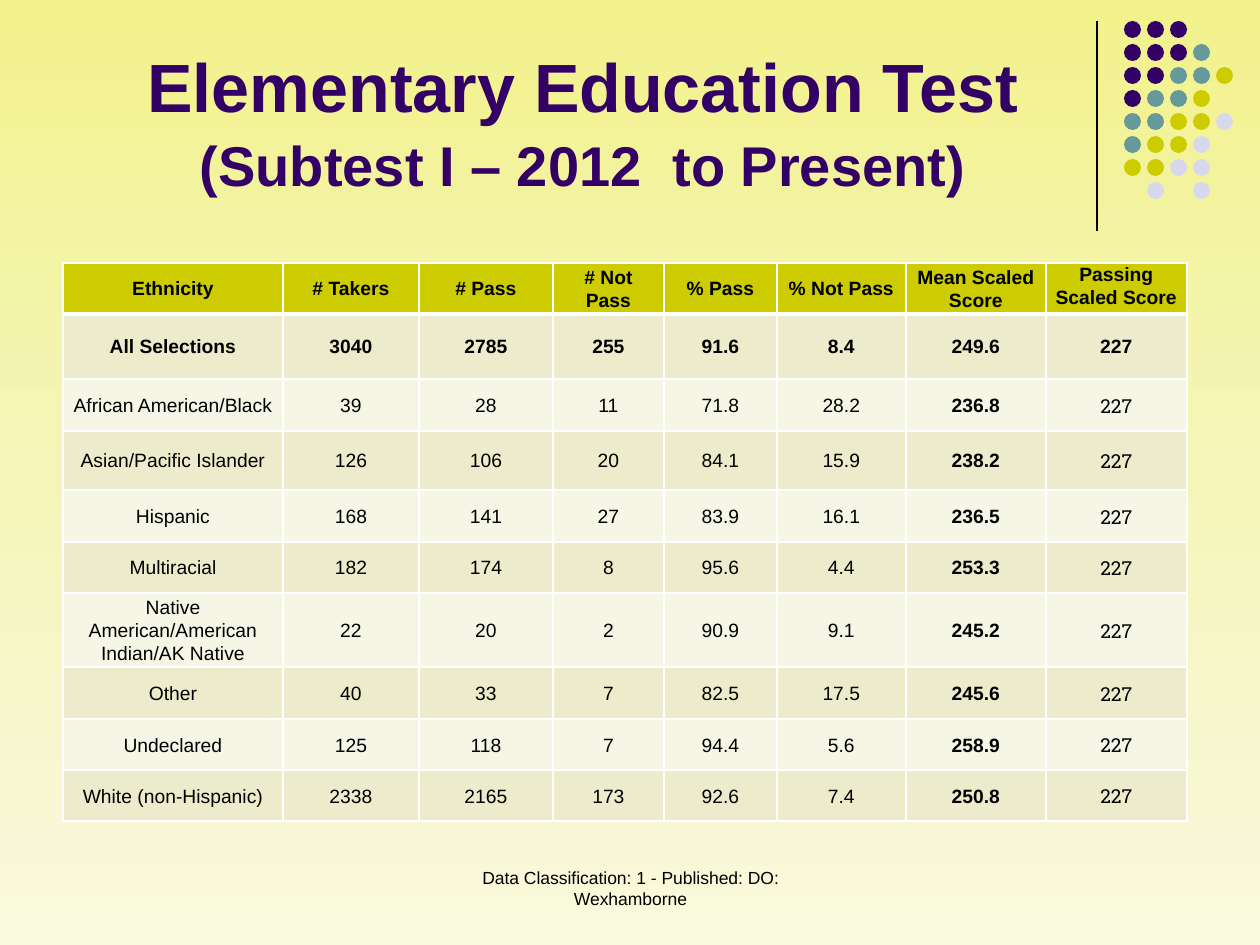
from copy import deepcopy

from lxml.etree import SubElement
from pptx import Presentation
from pptx.dml.color import RGBColor
from pptx.enum.shapes import MSO_CONNECTOR, MSO_SHAPE
from pptx.enum.text import MSO_ANCHOR, MSO_AUTO_SIZE, PP_ALIGN
from pptx.oxml.ns import qn
from pptx.util import Pt

LINE = MSO_CONNECTOR.STRAIGHT
OVAL = MSO_SHAPE.OVAL
TOP, MIDDLE, BOTTOM = MSO_ANCHOR.TOP, MSO_ANCHOR.MIDDLE, MSO_ANCHOR.BOTTOM
NO_FIT = MSO_AUTO_SIZE.NONE
CENTER = PP_ALIGN.CENTER

COLORS = {
    "black": "000000", "white": "FFFFFF", "purple": "330066",
    "teal": "669999", "lime": "CCCC00", "lilac": "D8D8EC",
    "dark": "ECECCC", "light": "F6F6E7",
    "sky": "F2F28C", "mid": "F5F5BA", "base": "F9F9DE",
}
DOTS = ["PPP", "PPPT", "PPTTY", "PTTY", "TTYYL", "TYYL", "YYLL", " L L"]
HUES = {"P": "purple", "T": "teal", "Y": "lime", "L": "lilac"}
WIDTHS = [220, 136, 134, 111, 113, 129, 140, 141]
HEIGHTS = [51, 65, 52, 59, 52, 51, 68, 52, 51, 51]
HEADS = ["Ethnicity", "# Takers", "# Pass", "# Not Pass", "% Pass",
         "% Not Pass", "Mean Scaled Score", "Passing Scaled Score"]
SCORES = [
    ["All Selections", 3040, 2785, 255, 91.6, 8.4, 249.6, 227],
    ["African American/Black", 39, 28, 11, 71.8, 28.2, 236.8, 227],
    ["Asian/Pacific Islander", 126, 106, 20, 84.1, 15.9, 238.2, 227],
    ["Hispanic", 168, 141, 27, 83.9, 16.1, 236.5, 227],
    ["Multiracial", 182, 174, 8, 95.6, 4.4, 253.3, 227],
    ["Native American/American Indian/AK Native",
     22, 20, 2, 90.9, 9.1, 245.2, 227],
    ["Other", 40, 33, 7, 82.5, 17.5, 245.6, 227],
    ["Undeclared", 125, 118, 7, 94.4, 5.6, 258.9, 227],
    ["White (non-Hispanic)", 2338, 2165, 173, 92.6, 7.4, 250.8, 227],
]


def px(num):
    """Turn pixels into EMU at 126 to the inch."""
    return num * 914400 // 126


def tint(name):
    """Give the named color."""
    return RGBColor.from_string(COLORS[name])


def write(frame, text, sizes=(11,), color="black", bold=False,
          font="Arial", space=1.0):
    """Write centered lines, each with its own size, into a frame."""
    para = frame.paragraphs[0]
    para.alignment = CENTER
    para.line_spacing = space
    for num, (line, size) in enumerate(zip(text.split("\n"), sizes)):
        if num:
            para.add_line_break()
        run = para.add_run()
        run.text = line
        run.font.size = Pt(size)
        run.font.name = font
        run.font.bold = bold
        run.font.color.rgb = tint(color)


def paint(slide):
    """Fill the background with a gradient from top to bottom."""
    fill = slide.background.fill
    fill.gradient()
    fill.gradient_angle = 270
    stops = slide.element.find(".//" + qn("a:gsLst"))
    stops.insert(1, deepcopy(stops[0]))
    for num, name in enumerate(["sky", "mid", "base"]):
        stop = fill.gradient_stops[num]
        stop.position = num / 2
        stop.color.rgb = tint(name)


def add_rule(slide):
    """Draw the upright line beside the title."""
    rule = slide.shapes.add_connector(LINE, px(1097), px(21), px(1097), px(231))
    rule.line.color.rgb = tint("black")
    rule.line.width = Pt(0.75)
    SubElement(rule.element.spPr, qn("a:effectLst"))


def add_dots(slide, left=1124, top=21, size=17, step=23):
    """Draw the grid of colored dots as a group."""
    group = slide.shapes.add_group_shape()
    for row, marks in enumerate(DOTS):
        for col, mark in enumerate(marks):
            if mark in HUES:
                dot = group.shapes.add_shape(
                    OVAL, px(left + col * step), px(top + row * step),
                    px(size), px(size))
                dot.shadow.inherit = False
                dot.fill.solid()
                dot.fill.fore_color.rgb = tint(HUES[mark])
                dot.line.fill.background()


def add_title(slide):
    """Place and write the title."""
    title = slide.shapes.title
    title.left, title.top = px(63), px(53)
    title.width, title.height = px(1040), px(151)
    frame = title.text_frame
    frame.auto_size = NO_FIT
    frame.word_wrap = True
    frame.vertical_anchor = BOTTOM
    write(frame, "Elementary Education Test\n(Subtest I – 2012  to Present)",
          sizes=(39, 32), color="purple", bold=True, space=1.07)


def add_foot(slide):
    """Add the classification note at the foot."""
    box = slide.shapes.add_textbox(px(431), px(861), px(399), px(63))
    box.text_frame.word_wrap = True
    write(box.text_frame, "Data Classification: 1 - Published: DO: Wexhamborne",
          sizes=(10,))


def edge(cell, row):
    """Draw white cell borders, thick under the header."""
    thick = {"lnT": row == 1, "lnB": row == 0}
    for side in ("lnL", "lnR", "lnT", "lnB"):
        width = Pt(3 if thick.get(side) else 1)
        line = SubElement(cell._tc.get_or_add_tcPr(), qn("a:" + side),
                          w=str(width))
        fill = SubElement(line, qn("a:solidFill"))
        SubElement(fill, qn("a:srgbClr"), val=COLORS["white"])


def fill_cell(cell, row, col, text):
    """Format one cell by its place and write its text."""
    last = col == len(HEADS) - 1
    edge(cell, row)
    cell.fill.solid()
    shade = "dark" if row % 2 else "light"
    cell.fill.fore_color.rgb = tint(shade if row else "lime")
    cell.margin_left = cell.margin_right = px(9)
    cell.margin_top = cell.margin_bottom = 0
    cell.vertical_anchor = TOP if last and row == 0 else MIDDLE
    write(cell.text_frame, str(text), bold=row < 2 or col == 6, space=1.07,
          font="Roboto Slab" if last and row > 1 else "Arial")


def add_scores(slide):
    """Add the table of results by ethnicity."""
    rows = [HEADS] + SCORES
    table = slide.shapes.add_table(
        len(rows), len(HEADS), px(63), px(263),
        px(sum(WIDTHS)), px(sum(HEIGHTS))).table
    table.horz_banding = False
    for col, width in zip(table.columns, WIDTHS):
        col.width = px(width)
    for row, height in zip(table.rows, HEIGHTS):
        row.height = px(height)
    for row, items in enumerate(rows):
        for col, text in enumerate(items):
            fill_cell(table.cell(row, col), row, col, text)


def main():
    """Build and save the slide."""
    deck = Presentation()
    deck.slide_width, deck.slide_height = px(1260), px(945)
    slide = deck.slides.add_slide(deck.slide_layouts[5])
    paint(slide)
    add_rule(slide)
    add_dots(slide)
    add_title(slide)
    add_foot(slide)
    add_scores(slide)
    deck.save("out.pptx")


if __name__ == "__main__":
    main()
